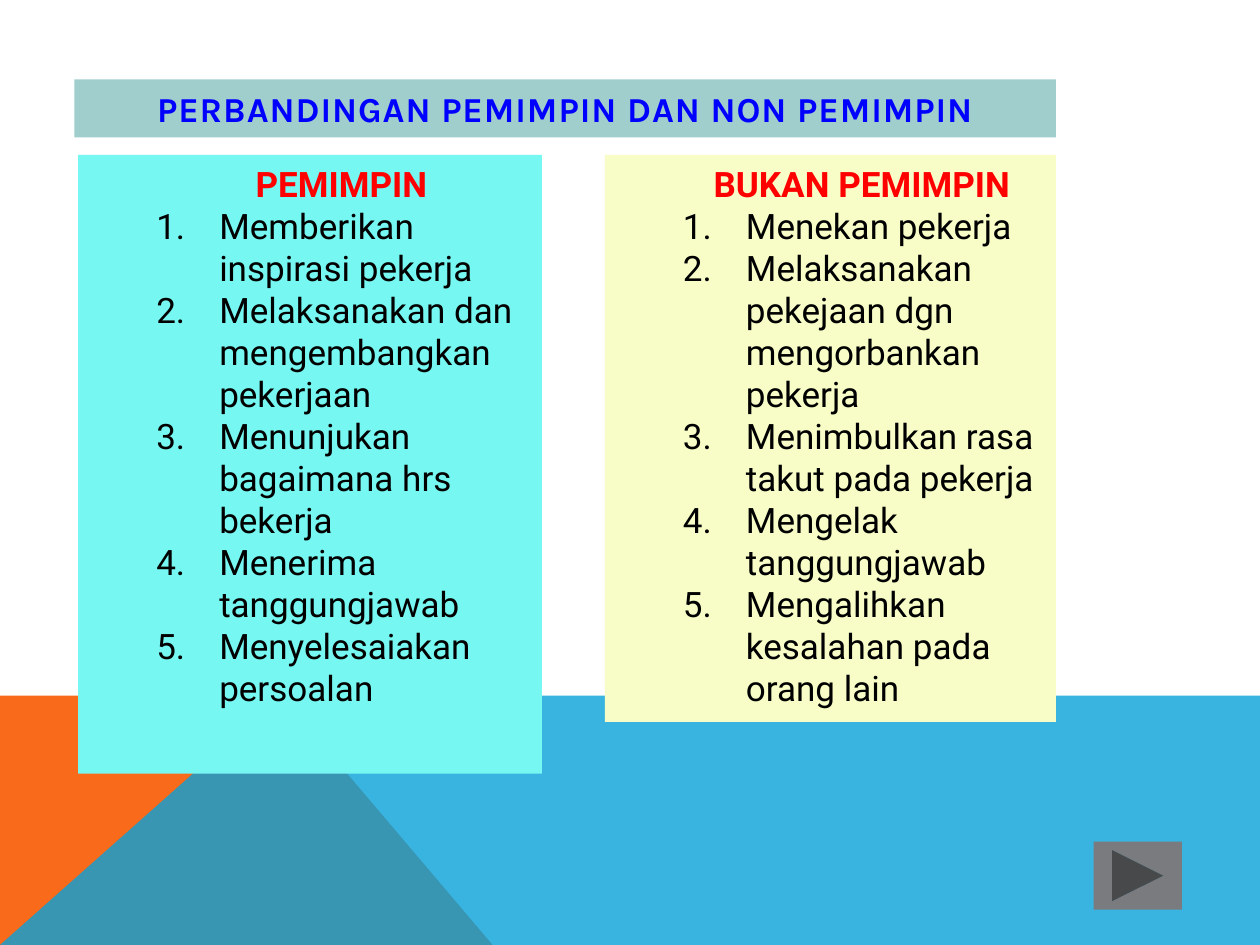
from dataclasses import dataclass

from lxml import etree
from pptx import Presentation
from pptx.dml.color import RGBColor
from pptx.enum.shapes import MSO_SHAPE
from pptx.enum.text import MSO_ANCHOR, MSO_AUTO_SIZE, PP_ALIGN
from pptx.oxml.ns import qn
from pptx.util import Inches, Pt

RECTANGLE = MSO_SHAPE.RECTANGLE
NEXT_BUTTON = MSO_SHAPE.ACTION_BUTTON_FORWARD_OR_NEXT
CENTER, LEFT = PP_ALIGN.CENTER, PP_ALIGN.LEFT
TOP, MIDDLE = MSO_ANCHOR.TOP, MSO_ANCHOR.MIDDLE
NO_AUTOFIT = MSO_AUTO_SIZE.NONE
TITLE_ONLY = 5


@dataclass(frozen=True)
class Theme:
    orange: str = "F96A1B"
    blue: str = "08A1D9"
    title_fill: str = "A0CECD"
    title_text: str = "0000FF"
    leader_fill: str = "77F7F1"
    other_fill: str = "F8FDC7"
    heading: str = "FF0000"
    body: str = "000000"
    button: str = "797B7E"
    title_font: str = "Karla"
    body_font: str = "Roboto"
    size: int = 20
    letter_spacing: int = 50
    wave_opacity: int = 80


THEME = Theme()

TITLE = "PERBANDINGAN PEMIMPIN DAN NON PEMIMPIN"
LEADER_TRAITS = [
    "Memberikan inspirasi pekerja",
    "Melaksanakan dan mengembangkan pekerjaan",
    "Menunjukan bagaimana hrs bekerja",
    "Menerima tanggungjawab",
    "Menyelesaiakan persoalan",
]
OTHER_TRAITS = [
    "Menekan pekerja",
    "Melaksanakan pekejaan dgn mengorbankan pekerja",
    "Menimbulkan rasa takut pada pekerja",
    "Mengelak tanggungjawab",
    "Mengalihkan kesalahan pada orang lain",
]


def set_fill(shape, color):
    shape.fill.solid()
    shape.fill.fore_color.rgb = RGBColor.from_string(color)


def style_shape(shape, color):
    set_fill(shape, color)
    shape.line.fill.background()
    shape.shadow.inherit = False


def style_paragraph(paragraph, font_name, color, bold, alignment):
    paragraph.alignment = alignment
    paragraph.font.name = font_name
    paragraph.font.size = Pt(THEME.size)
    paragraph.font.bold = bold
    paragraph.font.color.rgb = RGBColor.from_string(color)


def prepare_frame(frame, anchor):
    frame.word_wrap = True
    frame.auto_size = NO_AUTOFIT
    frame.vertical_anchor = anchor
    frame.margin_left = frame.margin_right = Inches(0.12)
    frame.margin_top = frame.margin_bottom = Inches(0.06)


def add_polygon(slide, points, color):
    corners = [(Inches(x), Inches(y)) for x, y in points]
    builder = slide.shapes.build_freeform(*corners[0])
    builder.add_line_segments(corners[1:], close=True)
    shape = builder.convert_to_shape()
    style_shape(shape, color)
    return shape


def add_backdrop(slide, left, top, width, height):
    right, bottom = left + width, top + height
    peak, foot = left + 2.23, left + 3.91
    add_polygon(slide, [(left, bottom), (left, top), (peak, top), (foot, bottom)],
                THEME.orange)
    wave = add_polygon(slide, [(left, bottom), (peak, top), (right, top), (right, bottom)],
                       THEME.blue)
    color = wave.fill._xPr.find(qn("a:solidFill"))[0]
    etree.SubElement(color, qn("a:alpha"), val=str(THEME.wave_opacity * 1000))


def add_title(slide, left, top, width, height):
    title = slide.shapes.title
    title.left, title.top = Inches(left), Inches(top)
    title.width, title.height = Inches(width), Inches(height)
    set_fill(title, THEME.title_fill)
    frame = title.text_frame
    prepare_frame(frame, MIDDLE)
    frame.text = TITLE
    paragraph = frame.paragraphs[0]
    style_paragraph(paragraph, THEME.title_font, THEME.title_text, True, CENTER)
    paragraph.runs[0].font._element.set("spc", str(THEME.letter_spacing))


def add_trait_panel(slide, left, top, width, height, color, heading, traits):
    panel = slide.shapes.add_shape(
        RECTANGLE, Inches(left), Inches(top), Inches(width), Inches(height))
    style_shape(panel, color)
    frame = panel.text_frame
    prepare_frame(frame, TOP)
    frame.text = "\n".join([heading, *traits])
    for index, paragraph in enumerate(frame.paragraphs):
        if index == 0:
            style_paragraph(paragraph, THEME.body_font, THEME.heading, True, CENTER)
        else:
            style_paragraph(paragraph, THEME.body_font, THEME.body, False, LEFT)
        properties = paragraph._p.get_or_add_pPr()
        properties.set("marL", str(Inches(1)))
        properties.set("indent", str(Inches(-0.5)))
        if index > 0:
            numbering = etree.Element(qn("a:buAutoNum"), type="arabicPeriod")
            properties.find(qn("a:defRPr")).addprevious(numbering)


def add_next_button(slide, left, top, width, height):
    button = slide.shapes.add_shape(
        NEXT_BUTTON, Inches(left), Inches(top), Inches(width), Inches(height))
    style_shape(button, THEME.button)


def main():
    presentation = Presentation()
    presentation.slide_width, presentation.slide_height = Inches(10), Inches(7.5)
    slide = presentation.slides.add_slide(presentation.slide_layouts[TITLE_ONLY])
    add_backdrop(slide, 0, 5.52, 10, 1.98)
    add_title(slide, 0.59, 0.63, 7.79, 0.46)
    add_trait_panel(slide, 0.62, 1.23, 3.68, 4.91, THEME.leader_fill,
                    "PEMIMPIN", LEADER_TRAITS)
    add_trait_panel(slide, 4.8, 1.23, 3.58, 4.5, THEME.other_fill,
                    "BUKAN PEMIMPIN", OTHER_TRAITS)
    add_next_button(slide, 8.68, 6.68, 0.7, 0.54)
    presentation.save("out.pptx")


if __name__ == "__main__":
    main()
